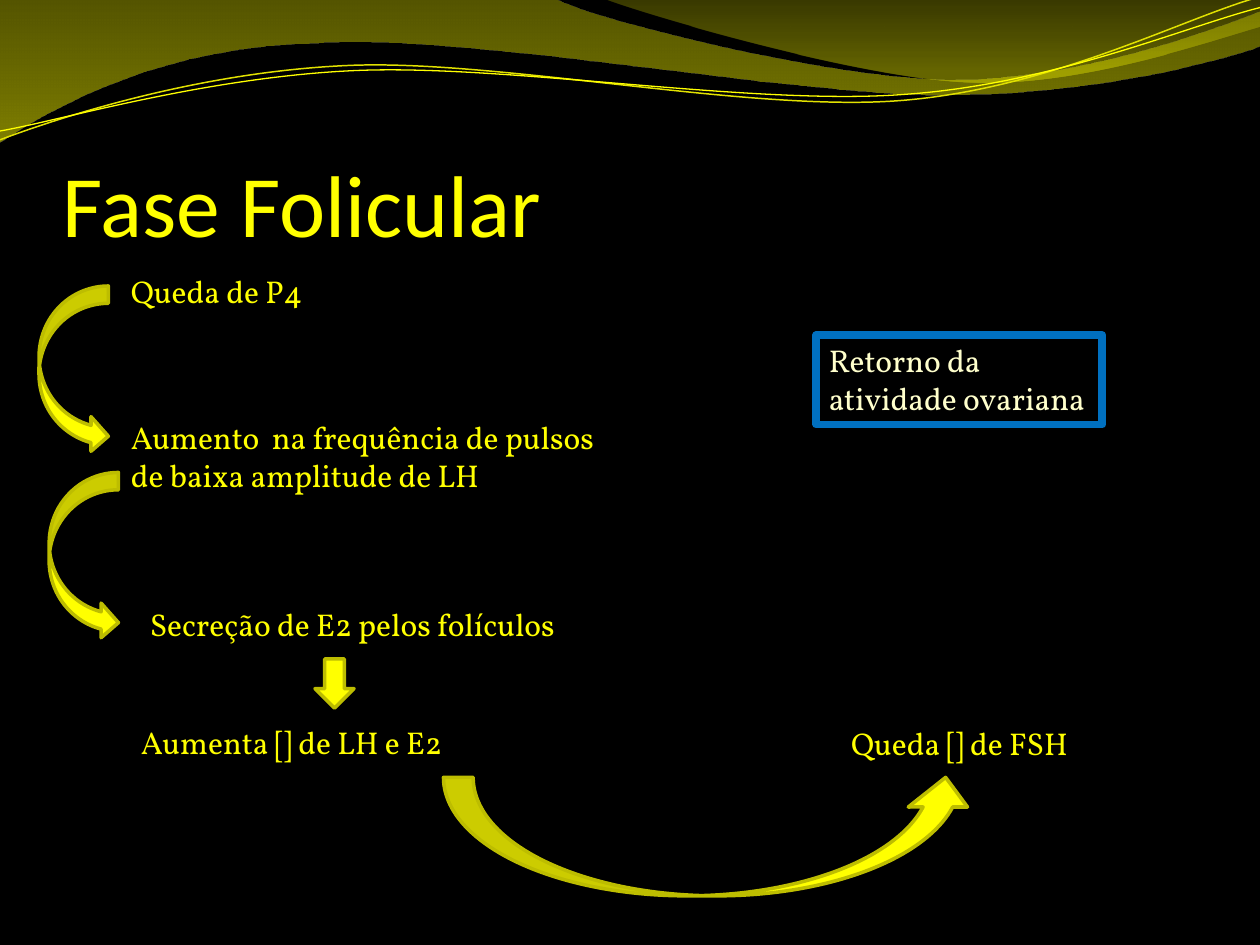
from lxml import etree
from pptx import Presentation
from pptx.dml.color import RGBColor
from pptx.enum.shapes import MSO_SHAPE as Kind
from pptx.enum.text import MSO_ANCHOR as Anchor, MSO_AUTO_SIZE as Auto, PP_ALIGN as Align
from pptx.oxml.ns import qn
from pptx.util import Inches, Pt

BLACK = RGBColor(0x00, 0x00, 0x00)
YELLOW = RGBColor(0xFF, 0xFF, 0x00)
GOLD = RGBColor(0xE1, 0xE1, 0x00)
LIME = RGBColor(0xE7, 0xE7, 0x00)
OLIVE = RGBColor(0xBD, 0xBD, 0x00)
CREAM = RGBColor(0xFF, 0xFF, 0xCC)
BLUE = RGBColor(0x00, 0x70, 0xC0)

deck = Presentation()
deck.slide_width, deck.slide_height = Inches(10), Inches(7.5)
slide = deck.slides.add_slide(deck.slide_layouts[6])
slide.background.fill.solid()
slide.background.fill.fore_color.rgb = BLACK
shapes = slide.shapes


def trace(start, parts, close):
    """Draw an outline; a part is one line end or the three points of a Bezier curve."""
    pen = shapes.build_freeform(*map(Inches, start))
    pen.add_line_segments(
        [(Inches(x), Inches(y)) for part in parts for x, y in part], close=close)
    shape = pen.convert_to_shape()
    shape.shadow.inherit = False
    # Merge each run of three line ends into one curve
    steps = iter(list(shape.element.spPr.iter(qn("a:lnTo"))))
    for part in parts:
        group = [next(steps) for _ in part]
        if len(group) == 3:
            curve = etree.Element(qn("a:cubicBezTo"))
            group[0].addprevious(curve)
            for step in group:
                curve.append(step[0])
                step.getparent().remove(step)
    return shape


def write(shape, text, font, size, color, align=Align.LEFT):
    """Fill a shape with one wrapped paragraph."""
    frame = shape.text_frame
    frame.word_wrap = True
    para = frame.paragraphs[0]
    para.text, para.alignment = text, align
    para.font.name, para.font.size = font, Pt(size)
    para.font.color.rgb = color
    return frame


# Header waves: start, parts, then (place, colour, opacity) of both stops
WAVES = [
    ((0, 0), [
        [(4.4, -0.01)],
        [(4.76, 0.17), (6.64, 0.63), (7.58, 0.63)],
        [(8.53, 0.63), (9.58, 0.26), (10, 0.09)],
        [(10.01, 0.36)],
        [(9.83, 0.44), (8.7, 0.76), (7.46, 0.75)],
        [(6.22, 0.75), (3.82, 0.28), (2.57, 0.34)],
        [(1.29, 0.36), (0.46, 0.83), (-0.01, 1.13)],
        [(0, 0)],
    ], [(0, OLIVE, 45), (1, LIME, 55)]),
    ((4.79, -0.01), [
        [(5.09, 0.11), (6.82, 0.62), (7.69, 0.65)],
        [(8.56, 0.69), (9.61, 0.32), (10, 0.21)],
        [(10, 0)],
        [(4.79, -0.01)],
    ], [(0, OLIVE, 30), (0.8, GOLD, 45)]),
]
for start, parts, stops in WAVES:
    wave = trace(start, parts, True)
    wave.line.fill.background()
    wave.fill.gradient()
    wave.fill.gradient_angle = 270
    for stop, (place, color, alpha) in zip(wave.fill.gradient_stops, stops):
        stop.position, stop.color.rgb = place, color
    for tag, (_, _, alpha) in zip(wave.element.spPr.iter(qn("a:srgbClr")), stops):
        etree.SubElement(tag, qn("a:alpha")).set("val", str(alpha * 1000))

# Header lines
LINES = [
    ((0, 1.11), [
        [(0.48, 0.93), (1.58, 0.57), (2.77, 0.52)],
        [(3.95, 0.47), (5.93, 0.89), (7.13, 0.8)],
        [(8.33, 0.71), (9.38, 0.15), (9.98, -0.02)],
    ], GOLD, 0.85),
    ((0, 1.04), [
        [(0.47, 0.96), (1.64, 0.61), (2.83, 0.56)],
        [(4.03, 0.51), (5.97, 0.84), (7.17, 0.75)],
        [(8.36, 0.67), (9.41, 0.21), (10, 0.06)],
    ], YELLOW, 0.75),
]
for start, parts, color, width in LINES:
    curve = trace(start, parts, False)
    curve.fill.background()
    curve.line.color.rgb, curve.line.width = color, Pt(width)

# Title
title = shapes.add_textbox(Inches(0.5), Inches(0.77), Inches(9), Inches(1.25))
frame = write(title, "Fase Folicular", "Calibri", 50, YELLOW)
frame.vertical_anchor = Anchor.BOTTOM
frame.margin_left = frame.margin_right = frame.margin_bottom = 0

# Steps of the phase
NOTES = [
    ("Queda de P4", 0.94, 2.11, 1.8, 0.4, Align.LEFT),
    ("Aumento  na frequência de pulsos de baixa amplitude de LH",
     0.94, 3.27, 3.91, 0.71, Align.LEFT),
    ("Secreção de E2 pelos folículos", 1.09, 4.75, 3.91, 0.4, Align.LEFT),
    ("Aumenta [] de LH e E2", 1.02, 5.69, 3.91, 0.4, Align.LEFT),
    ("Queda [] de FSH", 6.48, 5.7, 2.27, 0.4, Align.CENTER),
]
for text, *box, align in NOTES:
    note = shapes.add_textbox(*map(Inches, box))
    write(note, text, "Vollkorn", 18, YELLOW, align).auto_size = Auto.SHAPE_TO_FIT_TEXT

# Arrows between the steps
ARROWS = [
    (Kind.CURVED_RIGHT_ARROW, 0.31, 2.27, 0.55, 1.33),
    (Kind.CURVED_RIGHT_ARROW, 0.39, 3.75, 0.55, 1.33),
    (Kind.DOWN_ARROW, 2.5, 5.23, 0.31, 0.39),
    (Kind.CURVED_UP_ARROW, 3.52, 6.17, 4.22, 0.94),
]
for kind, *box in ARROWS:
    arrow = shapes.add_shape(kind, *map(Inches, box))
    arrow.shadow.inherit = False
    arrow.fill.solid()
    arrow.fill.fore_color.rgb = YELLOW
    arrow.line.color.rgb, arrow.line.width = OLIVE, Pt(2)

# Framed outcome
goal = shapes.add_shape(Kind.RECTANGLE, Inches(6.48), Inches(2.66), Inches(2.27), Inches(0.71))
goal.shadow.inherit = False
goal.fill.background()
goal.line.color.rgb, goal.line.width = BLUE, Pt(4.5)
frame = write(goal, "Retorno da atividade ovariana", "Vollkorn", 18, CREAM)
frame.vertical_anchor = Anchor.TOP
frame.auto_size = Auto.SHAPE_TO_FIT_TEXT

deck.save("out.pptx")
